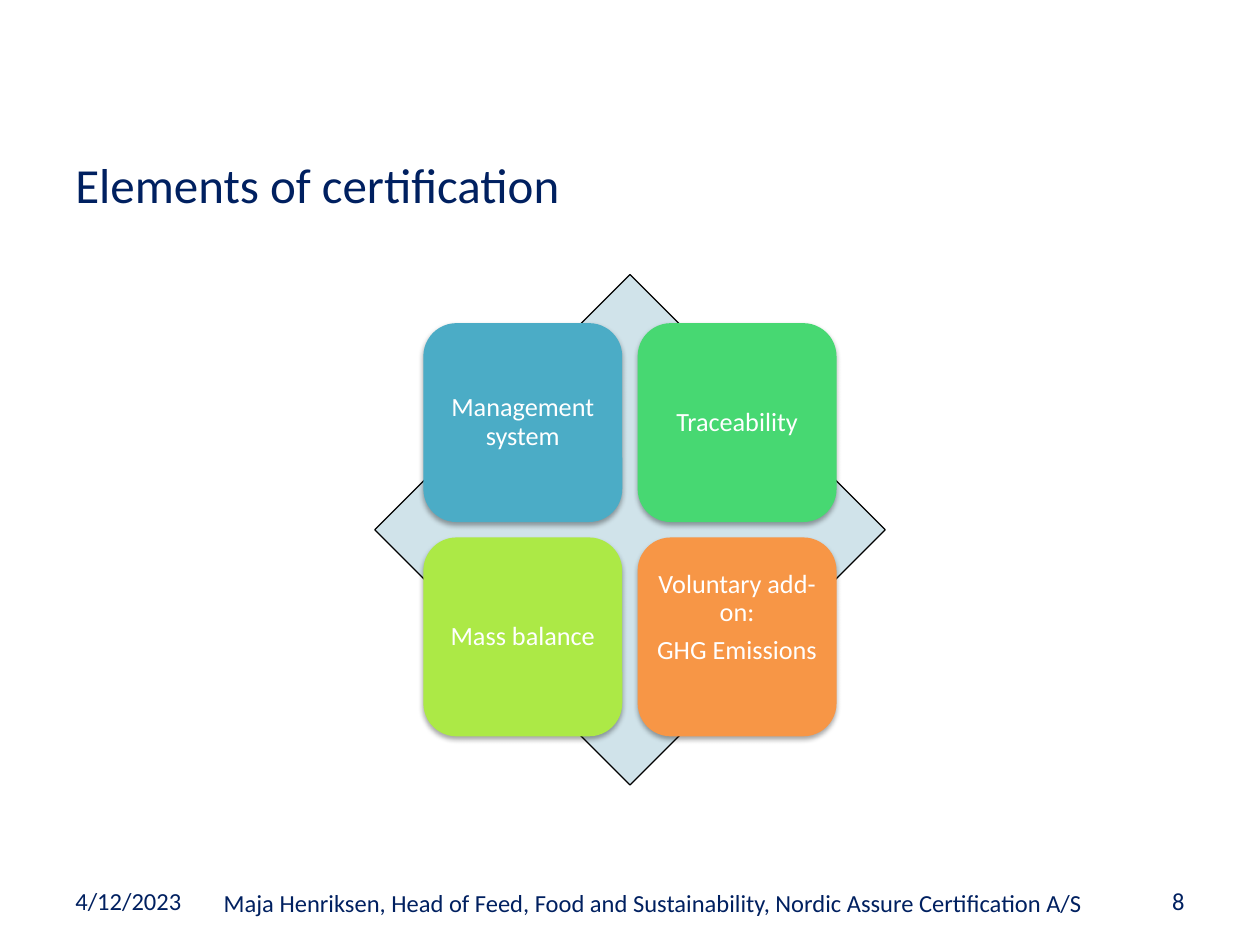
from lxml.etree import SubElement
from pptx import Presentation
from pptx.dml.color import RGBColor
from pptx.enum.shapes import MSO_SHAPE
from pptx.enum.text import MSO_ANCHOR, PP_ALIGN
from pptx.oxml.ns import qn
from pptx.util import Cm, Pt

NAVY = RGBColor(0x00, 0x20, 0x60)
WHITE = RGBColor(0xFF, 0xFF, 0xFF)
BLACK = RGBColor(0x00, 0x00, 0x00)
PALE_BLUE = RGBColor(0xD0, 0xE3, 0xEA)
BLUE = RGBColor(0x4B, 0xAC, 0xC6)
GREEN = RGBColor(0x47, 0xD8, 0x72)
LIME = RGBColor(0xAC, 0xE9, 0x46)
ORANGE = RGBColor(0xF7, 0x96, 0x46)
FONT = "Calibri"

# text, size, alignment, (left, top, width, height) in cm
LABELS = [
    ("Elements of certification", 28, PP_ALIGN.LEFT, (1.27, 2.11, 22.86, 3.18)),
    ("4/12/2023", 14, PP_ALIGN.LEFT, (1.27, 17.65, 5.92, 1.01)),
    ("Maja Henriksen, Head of Feed, Food and Sustainability, "
     "Nordic Assure Certification A/S", 14, PP_ALIGN.CENTER, (4.24, 17.7, 17.86, 1.01)),
    ("8", 14, PP_ALIGN.RIGHT, (18.21, 17.65, 5.92, 1.01)),
]
# paragraphs, fill, bottom inset in cm; row by row
ELEMENTS = [
    (["Management system"], BLUE, 0.15),
    (["Traceability"], GREEN, 0.15),
    (["Mass balance"], LIME, 0.15),
    (["Voluntary add-on:", "GHG Emissions"], ORANGE, 0.9),
]
CENTRE_X, CENTRE_Y = 12.7, 10.68
DIAMOND_SIZE = 10.29
TILE_SIZE, TILE_PITCH = 4.01, 4.32


def add_run(paragraph, text, size, color):
    run = paragraph.add_run()
    run.text = text
    run.font.name = FONT
    run.font.size = Pt(size)
    run.font.color.rgb = color


def add_label(slide, text, size, alignment, place):
    frame = slide.shapes.add_textbox(*map(Cm, place)).text_frame
    frame.word_wrap = True
    frame.vertical_anchor = MSO_ANCHOR.MIDDLE
    frame.paragraphs[0].alignment = alignment
    add_run(frame.paragraphs[0], text, size, NAVY)


def add_centred_square(slide, preset, x, y, size, fill):
    """Add a square shape whose middle is at x, y."""
    square = slide.shapes.add_shape(
        preset, Cm(x - size / 2), Cm(y - size / 2), Cm(size), Cm(size))
    square.shadow.inherit = False
    square.fill.solid()
    square.fill.fore_color.rgb = fill
    return square


def add_soft_shadow(shape):
    effects = shape._element.spPr.find(qn("a:effectLst"))
    shadow = SubElement(effects, qn("a:outerShdw"), blurRad=str(Pt(3.1)),
                        dist=str(Pt(1.8)), dir="5400000", rotWithShape="0")
    color = SubElement(shadow, qn("a:srgbClr"), val=str(BLACK))
    SubElement(color, qn("a:alpha"), val="35000")


def add_tile(slide, x, y, lines, fill, bottom_inset):
    tile = add_centred_square(slide, MSO_SHAPE.ROUNDED_RECTANGLE, x, y, TILE_SIZE, fill)
    tile.line.fill.background()
    add_soft_shadow(tile)
    frame = tile.text_frame
    frame.word_wrap = True
    frame.vertical_anchor = MSO_ANCHOR.MIDDLE
    frame.margin_left = frame.margin_right = frame.margin_top = Cm(0.15)
    frame.margin_bottom = Cm(bottom_inset)
    for index, line in enumerate(lines):
        paragraph = frame.add_paragraph() if index else frame.paragraphs[0]
        paragraph.alignment = PP_ALIGN.CENTER
        paragraph.line_spacing = 0.9
        paragraph.space_after = Pt(5.5)
        add_run(paragraph, line, 15, WHITE)


def main():
    deck = Presentation()
    deck.slide_width, deck.slide_height = Cm(25.4), Cm(19.05)
    slide = deck.slides.add_slide(deck.slide_layouts[6])

    diamond = add_centred_square(
        slide, MSO_SHAPE.DIAMOND, CENTRE_X, CENTRE_Y, DIAMOND_SIZE, PALE_BLUE)
    diamond.line.color.rgb = BLACK
    diamond.line.width = Pt(0.75)

    for index, element in enumerate(ELEMENTS):
        row, column = divmod(index, 2)
        add_tile(slide, CENTRE_X + (column - 0.5) * TILE_PITCH,
                 CENTRE_Y + (row - 0.5) * TILE_PITCH, *element)

    for label in LABELS:
        add_label(slide, *label)

    deck.save("out.pptx")


if __name__ == "__main__":
    main()
